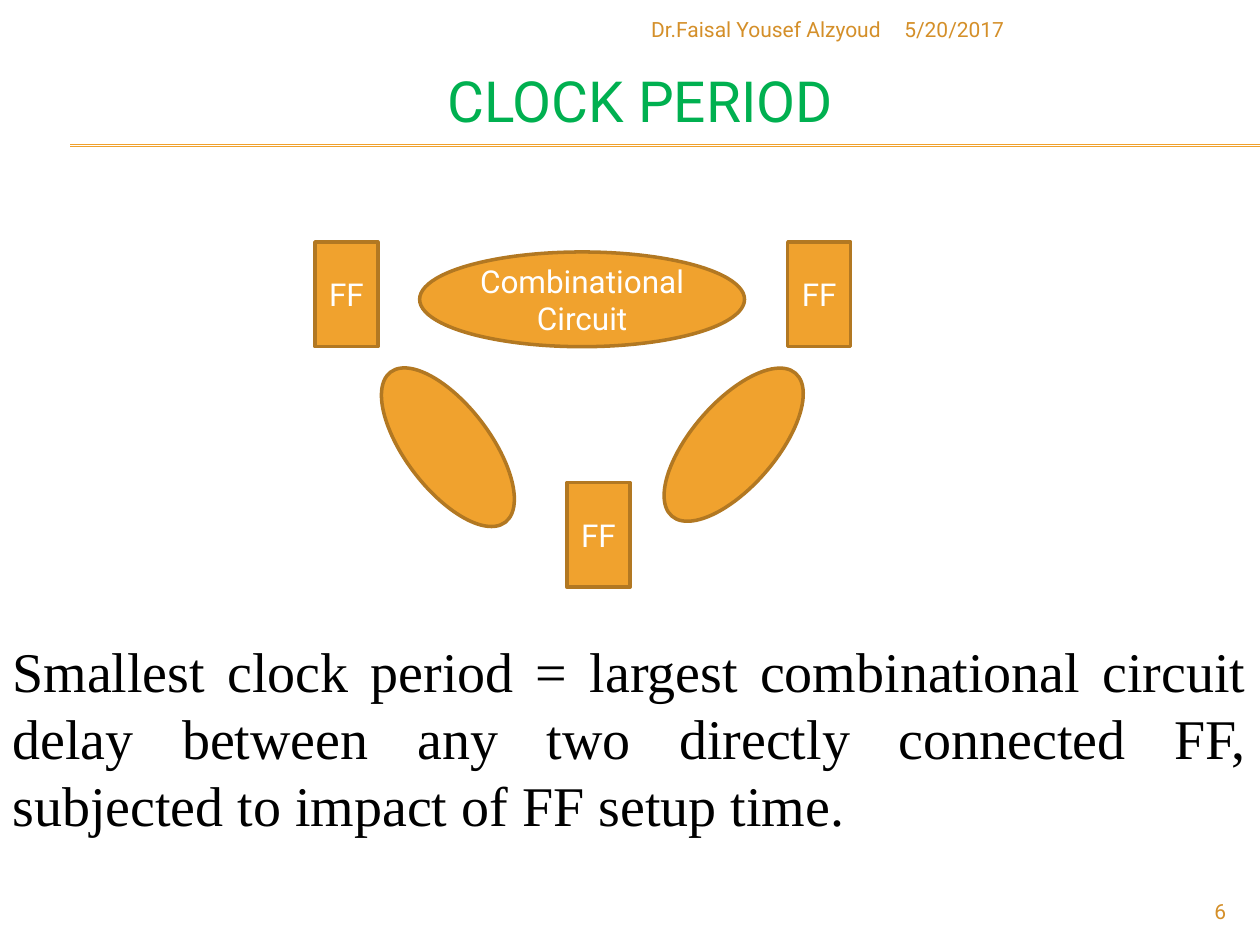
from lxml import etree
from pptx import Presentation
from pptx.dml.color import RGBColor
from pptx.enum import shapes, text
from pptx.oxml import ns
from pptx.util import Cm, Pt

ORANGE = RGBColor(0xF0, 0xA2, 0x2E)
BROWN = RGBColor(0xB2, 0x78, 0x22)
OCHRE = RGBColor(0xD4, 0x8F, 0x29)
GREEN = RGBColor(0x00, 0xB0, 0x50)
BLACK = RGBColor(0, 0, 0)
WHITE = RGBColor(0xFF, 0xFF, 0xFF)

LEFT, CENTER = text.PP_ALIGN.LEFT, text.PP_ALIGN.CENTER
RIGHT, JUSTIFY = text.PP_ALIGN.RIGHT, text.PP_ALIGN.JUSTIFY
TOP, MIDDLE = text.MSO_ANCHOR.TOP, text.MSO_ANCHOR.MIDDLE

SLIDE_WIDTH, SLIDE_HEIGHT = 25.4, 19.05
FLIP_FLOPS = [(6.35, 4.88), (15.88, 4.88), (11.43, 9.73)]
TILTED_CIRCUITS = [(8.18, 7.11, 322.6), (13.94, 7.06, 40.9)]


def write(shape, words, size=12, color=OCHRE, font="Roboto", align=LEFT, anchor=TOP):
    frame = shape.text_frame
    frame.word_wrap = True
    frame.vertical_anchor = anchor
    para = frame.paragraphs[0]
    para.alignment = align
    span = para.add_run()
    span.text = words
    span.font.size = Pt(size)
    span.font.name = font
    span.font.color.rgb = color


def add_text(page, words, left, top, width, height, **style):
    box = page.shapes.add_textbox(Cm(left), Cm(top), Cm(width), Cm(height))
    write(box, words, **style)


def add_block(page, kind, left, top, width, height, label="", rotation=0):
    """Add an orange part of the circuit diagram."""
    block = page.shapes.add_shape(kind, Cm(left), Cm(top), Cm(width), Cm(height))
    block.shadow.inherit = False
    block.rotation = rotation
    block.fill.solid()
    block.fill.fore_color.rgb = ORANGE
    block.line.color.rgb = BROWN
    block.line.width = Pt(2)
    if label:
        write(block, label, size=18, color=WHITE, align=CENTER, anchor=MIDDLE)


def add_rule(page, top):
    rule = page.shapes.add_connector(
        shapes.MSO_CONNECTOR.STRAIGHT, Cm(1.42), Cm(top), Cm(SLIDE_WIDTH), Cm(top))
    rule.line.color.rgb = ORANGE
    rule.line.width = Pt(0.75)
    etree.SubElement(rule._element.spPr, ns.qn("a:effectLst"))


def add_diagram(page):
    rectangle, oval = shapes.MSO_SHAPE.RECTANGLE, shapes.MSO_SHAPE.OVAL
    for left, top in FLIP_FLOPS:
        add_block(page, rectangle, left, top, 1.27, 2.11, label="FF")
    add_block(page, oval, 8.46, 5.08, 6.55, 1.91, label="Combinational Circuit")
    for left, top, rotation in TILTED_CIRCUITS:
        add_block(page, oval, left, top, 1.7, 3.81, rotation=rotation)


def main():
    deck = Presentation()
    deck.slide_width, deck.slide_height = Cm(SLIDE_WIDTH), Cm(SLIDE_HEIGHT)
    page = deck.slides.add_slide(deck.slide_layouts[6])

    for top in (2.92, 2.95):
        add_rule(page, top)
    add_text(page, "CLOCK PERIOD", 0.84, 1.27, 24.13, 1.47,
             size=32.4, color=GREEN, align=CENTER, anchor=MIDDLE)
    add_diagram(page)
    add_text(page, "Smallest clock period = largest combinational circuit delay "
             "between any two directly connected FF, subjected to impact of FF setup time.",
             0, 12.7, SLIDE_WIDTH, 4.37,
             size=32, color=BLACK, font="Times New Roman", align=JUSTIFY)
    add_text(page, "Dr.Faisal Yousef Alzyoud", 9.96, 0.2, 8.05, 0.81, align=RIGHT)
    add_text(page, "5/20/2017", 17.98, 0.2, 6.99, 0.81)
    add_text(page, "6", 22.86, 17.98, 2.11, 0.69, align=RIGHT)

    deck.save("out.pptx")


if __name__ == "__main__":
    main()
